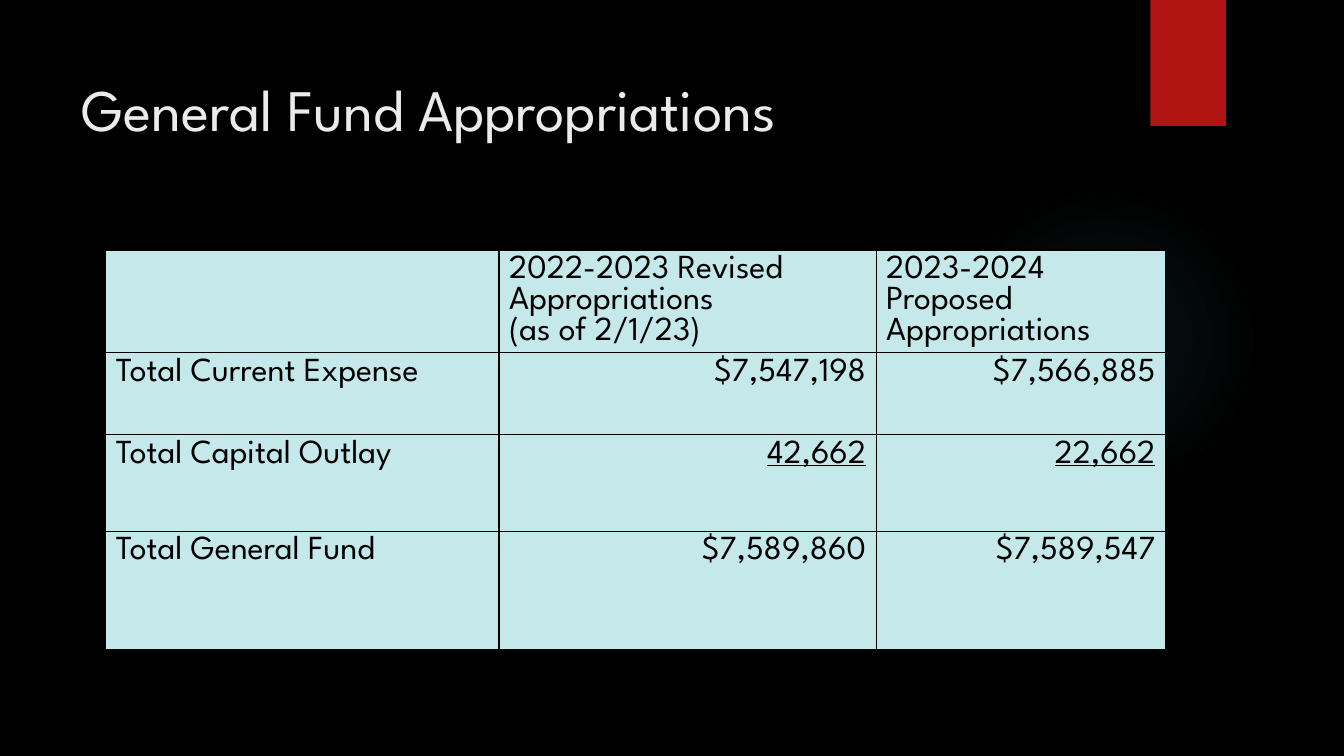
import dataclasses
import typing

import lxml.etree
import pptx
import pptx.dml.color
import pptx.enum.shapes
import pptx.enum.text
import pptx.oxml
import pptx.oxml.ns
import pptx.util

SCALE = 9144  # EMU per px, 100 px to the inch
FONT = "League Spartan"
BLACK, RED, CYAN, PALE, WHITE = "000000", "B01513", "50B9C1", "C5E8EA", "EBEBEB"
SHAPE = pptx.enum.shapes.MSO_SHAPE
ALIGN = pptx.enum.text.PP_ALIGN


@dataclasses.dataclass
class Box:
    left: int
    top: int
    width: int
    height: int

    def emu(self) -> list[int]:
        return [px(n) for n in (self.left, self.top, self.width, self.height)]


@dataclasses.dataclass
class Row:
    height: int
    cells: list[str]
    head: bool = False
    under: bool = False


COLS = [390, 374, 287]
ROWS = [
    Row(102, ["", "2022-2023 Revised Appropriations\n(as of 2/1/23)",
              "2023-2024 Proposed Appropriations"], head=True),
    Row(81, ["Total Current Expense", "$7,547,198", "$7,566,885"]),
    Row(96, ["Total Capital Outlay", "42,662", "22,662"], under=True),
    Row(117, ["Total General Fund", "$7,589,860", "$7,589,547"]),
]


def px(count: int) -> int:
    return pptx.util.Emu(count * SCALE)


def color(code: str) -> pptx.dml.color.RGBColor:
    return pptx.dml.color.RGBColor.from_string(code)


def paint(item: typing.Any, code: str) -> None:
    item.fill.solid()
    item.fill.fore_color.rgb = color(code)


def write(para: typing.Any, text: str, size: int, code: str, under: bool = False) -> None:
    run = para.add_run()
    run.text = text
    run.font.name = FONT
    run.font.size = pptx.util.Pt(size)
    run.font.color.rgb = color(code)
    if under:
        run.font.underline = True


def shape(slide: typing.Any, kind: typing.Any, box: Box, code: str) -> typing.Any:
    item = slide.shapes.add_shape(kind, *box.emu())
    item.shadow.inherit = False
    item.line.fill.background()
    paint(item, code)
    return item


def glow(item: typing.Any, code: str, stops: list[tuple[int, int]]) -> None:
    """Swap the solid fill for a round gradient; stops are (place, opacity) percents."""
    marks = "".join(
        f'<a:gs pos="{place * 1000}"><a:srgbClr val="{code}">'
        f'<a:alpha val="{alpha * 1000}"/></a:srgbClr></a:gs>'
        for place, alpha in stops)
    fill = pptx.oxml.parse_xml(
        f'<a:gradFill {pptx.oxml.ns.nsdecls("a")}><a:gsLst>{marks}</a:gsLst>'
        '<a:path path="circle"><a:fillToRect l="50000" t="50000" r="50000" b="50000"/>'
        '</a:path></a:gradFill>')
    props = item.fill._xPr
    props.replace(props.find(pptx.oxml.ns.qn("a:solidFill")), fill)


def edge(cell: typing.Any, code: str) -> None:
    props = cell._tc.get_or_add_tcPr()
    for spot, side in enumerate(("lnL", "lnR", "lnT", "lnB")):
        line = pptx.oxml.parse_xml(
            f'<a:{side} {pptx.oxml.ns.nsdecls("a")} w="12700"><a:solidFill>'
            f'<a:srgbClr val="{code}"/></a:solidFill></a:{side}>')
        props.insert(spot, line)


def fill_cell(cell: typing.Any, row: Row, col: int) -> None:
    paint(cell, PALE)
    edge(cell, BLACK)
    frame = cell.text_frame
    figure = col > 0 and not row.head
    for spot, text in enumerate(row.cells[col].split("\n")):
        para = frame.add_paragraph() if spot else frame.paragraphs[0]
        para.alignment = ALIGN.RIGHT if figure else ALIGN.LEFT
        if text:
            write(para, text, 24, BLACK, figure and row.under)


def add_grid(slide: typing.Any, left: int, top: int) -> None:
    box = Box(left, top, sum(COLS), sum(row.height for row in ROWS))
    grid = slide.shapes.add_table(len(ROWS), len(COLS), *box.emu()).table
    grid.first_row = grid.horz_banding = False
    for col, width in enumerate(COLS):
        grid.columns[col].width = px(width)
    for spot, row in enumerate(ROWS):
        grid.rows[spot].height = px(row.height)
        for col in range(len(COLS)):
            fill_cell(grid.cell(spot, col), row, col)


def add_title(slide: typing.Any, text: str) -> None:
    title = slide.shapes.title
    title.left, title.top, title.width, title.height = Box(71, 50, 1029, 153).emu()
    frame = title.text_frame
    frame.word_wrap = True
    frame.auto_size = pptx.enum.text.MSO_AUTO_SIZE.NONE
    frame.vertical_anchor = pptx.enum.text.MSO_ANCHOR.TOP
    frame.margin_top = px(22)
    frame.paragraphs[0].alignment = ALIGN.LEFT
    write(frame.paragraphs[0], text, 42, WHITE)


def main() -> None:
    deck = pptx.Presentation()
    deck.slide_width, deck.slide_height = px(1333), px(750)
    slide = deck.slides.add_slide(deck.slide_layouts[5])
    paint(slide.background, BLACK)

    # Backdrop
    disc = shape(slide, SHAPE.OVAL, Box(941, 183, 308, 308), CYAN)
    glow(disc, CYAN, [(0, 7), (36, 6), (69, 0)])
    shape(slide, SHAPE.RECTANGLE, Box(1141, 0, 75, 125), RED)

    # Content
    add_title(slide, "General Fund Appropriations")
    add_grid(slide, 105, 248)
    deck.save("out.pptx")


if __name__ == "__main__":
    main()
